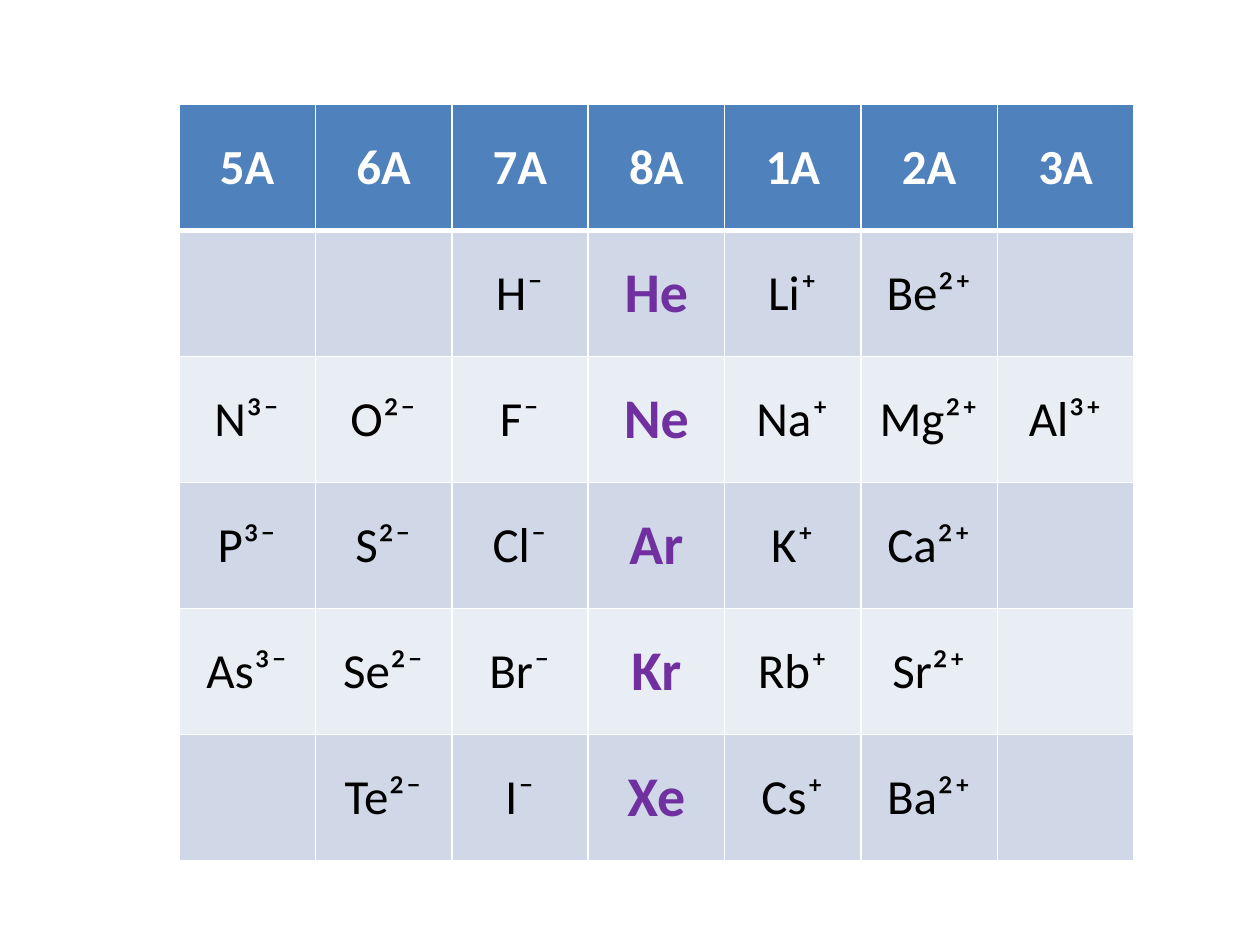
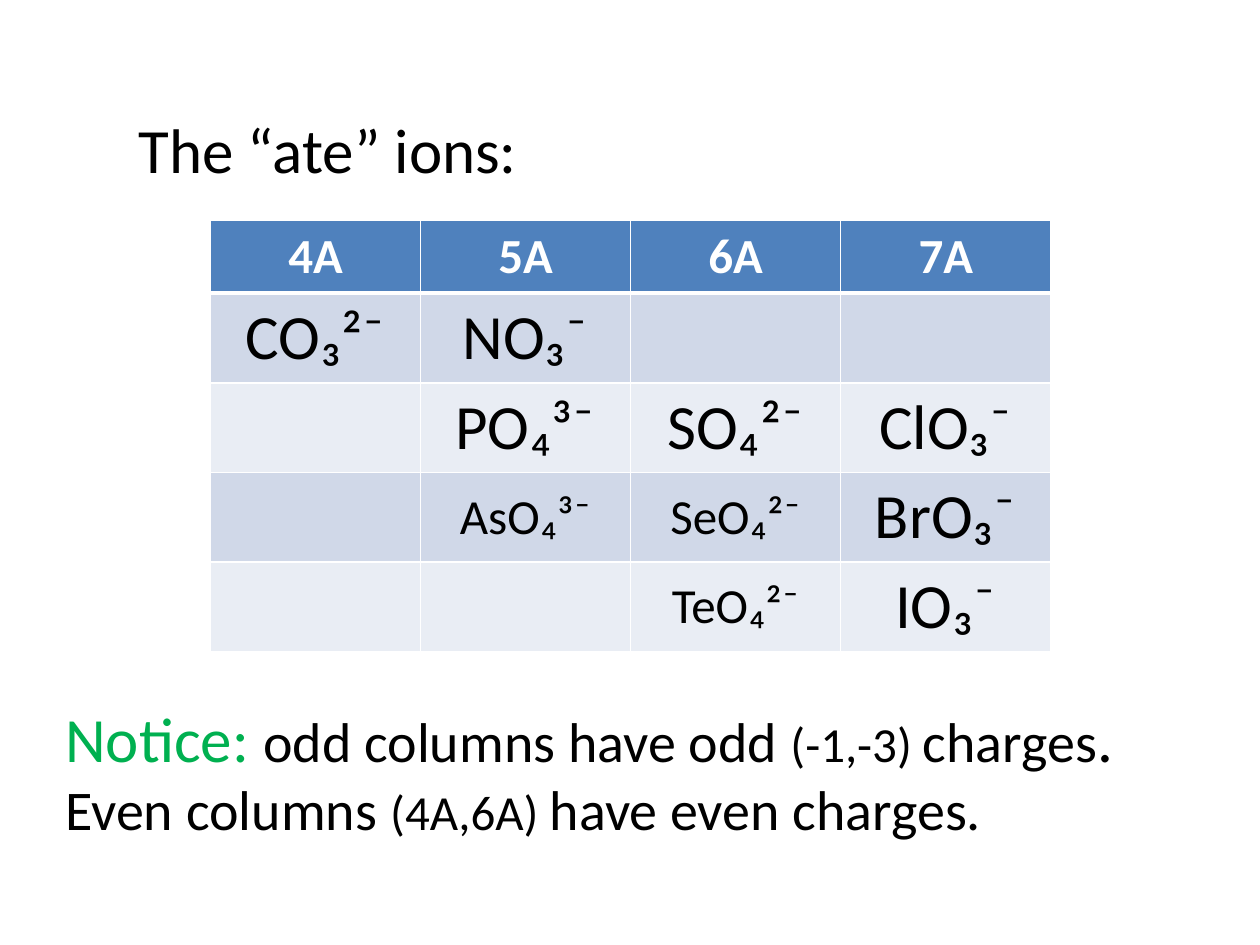
"""Build two slides of ion charge tables."""
import dataclasses

import pptx
import pptx.dml.color
import pptx.enum.text
import pptx.oxml
import pptx.oxml.ns
import pptx.util

Inches = pptx.util.Inches
Align = pptx.enum.text.PP_ALIGN
Anchor = pptx.enum.text.MSO_ANCHOR
Fit = pptx.enum.text.MSO_AUTO_SIZE


@dataclasses.dataclass(frozen=True)
class Theme:
    """Colours, font, type sizes and rule widths shared by the slides."""
    face: str = "Calibri"
    white: str = "FFFFFF"
    black: str = "000000"
    blue: str = "4F81BD"
    bands: tuple = ("D0D8E8", "E9EDF4")
    noble: str = "7030A0"
    green: str = "00B050"
    small: int = 28
    mid: int = 32
    large: int = 36
    thin: int = 1
    thick: int = 3


THEME = Theme()

CHARGES = [
    ["5A", "6A", "7A", "8A", "1A", "2A", "3A"],
    ["", "", "H⁻", "He", "Li⁺", "Be²⁺", ""],
    ["N³⁻", "O²⁻", "F⁻", "Ne", "Na⁺", "Mg²⁺", "Al³⁺"],
    ["P³⁻", "S²⁻", "Cl⁻", "Ar", "K⁺", "Ca²⁺", ""],
    ["As³⁻", "Se²⁻", "Br⁻", "Kr", "Rb⁺", "Sr²⁺", ""],
    ["", "Te²⁻", "I⁻", "Xe", "Cs⁺", "Ba²⁺", ""],
]
ATES = [
    ["4A", "5A", "6A", "7A"],
    ["CO₃²⁻", "NO₃⁻", "", ""],
    ["", "PO₄³⁻", "SO₄²⁻", "ClO₃⁻"],
    ["", "AsO₄³⁻", "SeO₄²⁻", "BrO₃⁻"],
    ["", "", "TeO₄²⁻", "IO₃⁻"],
]
MINOR = {"AsO₄³⁻", "SeO₄²⁻", "TeO₄²⁻"}
NOTICE = [
    [("Notice: ", THEME.large, THEME.green), ("odd columns have odd ", THEME.mid),
     ("(-1,-3) ", THEME.small), ("charges", THEME.mid), (".", THEME.large)],
    [("Even columns ", THEME.mid), ("(4A,6A) ", THEME.small),
     ("have even charges.", THEME.mid)],
]


def apply(item, form):
    """Set each attribute named in a dict of format values."""
    for name, value in form.items():
        setattr(item, name, value)


def add_run(para, text, size, ink=THEME.black, bold=False):
    """Add one styled run to a paragraph."""
    run = para.add_run()
    run.text = text
    apply(run.font, {"name": THEME.face, "size": pptx.util.Pt(size), "bold": bold})
    run.font.color.rgb = pptx.dml.color.RGBColor.from_string(ink)


def add_lines(cell, widths):
    """Draw white borders of the given widths, keyed by side."""
    props = cell._tc.get_or_add_tcPr()
    for spot, side in enumerate("LRTB"):
        width = pptx.util.Pt(widths.get(side, THEME.thin))
        line = pptx.oxml.parse_xml(
            f'<a:ln{side} {pptx.oxml.ns.nsdecls("a")} w="{width}"><a:solidFill>'
            f'<a:srgbClr val="{THEME.white}"/></a:solidFill></a:ln{side}>')
        props.insert(spot, line)


def fill_cell(cell, text, style, fill, widths):
    """Fill, border and label one table cell."""
    cell.vertical_anchor = Anchor.MIDDLE
    cell.fill.solid()
    cell.fill.fore_color.rgb = pptx.dml.color.RGBColor.from_string(fill)
    add_lines(cell, widths)
    if text:
        para = cell.text_frame.paragraphs[0]
        para.alignment = Align.CENTER
        add_run(para, text, *style)


def add_grid(slide, data, box, head, style):
    """Add a banded table whose body style depends on column and text."""
    left, top, width, height = map(Inches, box)
    count = len(data)
    grid = slide.shapes.add_table(count, len(data[0]), left, top, width, height).table
    body = (height - Inches(head)) // (count - 1)
    for i, row in enumerate(data):
        grid.rows[i].height = body if i else Inches(head)
        for j, text in enumerate(row):
            if i:
                look, fill = style(data[0][j], text), THEME.bands[(i - 1) % 2]
            else:
                look, fill = (THEME.small, THEME.white, True), THEME.blue
            edge = {0: {"B": THEME.thick}, 1: {"T": THEME.thick}}.get(i, {})
            fill_cell(grid.cell(i, j), text, look, fill, edge)


def ion_style(group, text):
    """Give noble gases a bold accent."""
    if group == "8A":
        return THEME.mid, THEME.noble, True
    return (THEME.small,)


def ate_style(group, text):
    """Set the minor ions smaller."""
    return (THEME.small if text in MINOR else THEME.large,)


def set_text(shape, box, lines):
    """Place a text shape and write its lines of runs."""
    places = ("left", "top", "width", "height")
    apply(shape, dict(zip(places, map(Inches, box))))
    frame = shape.text_frame
    apply(frame, {"word_wrap": True, "auto_size": Fit.NONE,
                  "vertical_anchor": Anchor.TOP})
    for i, line in enumerate(lines):
        para = frame.add_paragraph() if i else frame.paragraphs[0]
        para.alignment = Align.LEFT
        for part in line:
            add_run(para, *part)


def main():
    """Build and save the deck."""
    deck = pptx.Presentation()
    apply(deck, {"slide_width": Inches(10), "slide_height": Inches(7.5)})

    slide = deck.slides.add_slide(deck.slide_layouts.get_by_name("Blank"))
    add_grid(slide, CHARGES, (1.42, 0.83, 7.58, 6), 1, ion_style)

    slide = deck.slides.add_slide(deck.slide_layouts.get_by_name("Title Only"))
    set_text(slide.shapes.title, (1, 0.83, 3.42, 0.71),
             [[("The “ate” ions:", THEME.large)]])
    add_grid(slide, ATES, (1.67, 1.75, 6.67, 3.41), 0.57, ate_style)
    box = (0.42, 5.5, 9.17, 1.25)
    set_text(slide.shapes.add_textbox(*map(Inches, box)), box, NOTICE)

    deck.save("out.pptx")


if __name__ == "__main__":
    main()
